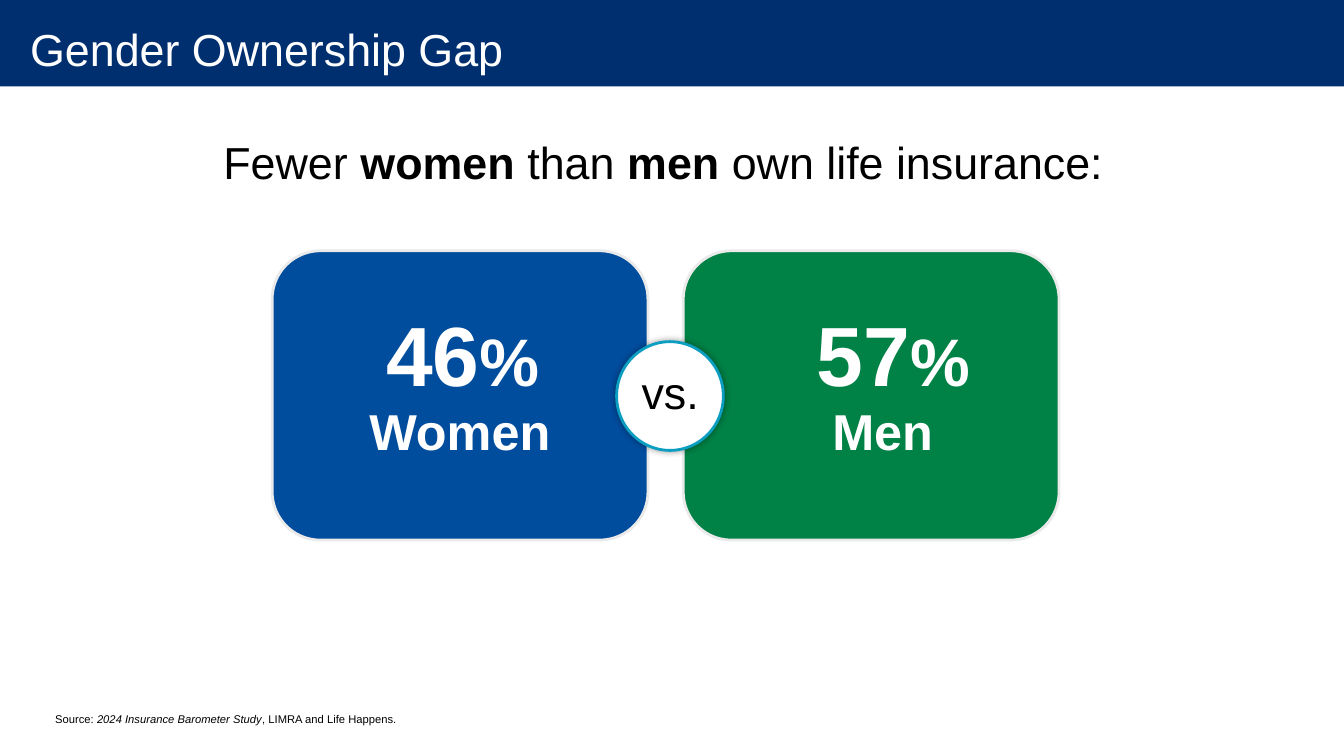
from dataclasses import dataclass

from lxml.etree import SubElement
from pptx import Presentation
from pptx.dml.color import RGBColor
from pptx.enum.shapes import MSO_SHAPE
from pptx.enum.text import MSO_ANCHOR, PP_ALIGN
from pptx.oxml.ns import qn
from pptx.util import Cm, Pt


@dataclass(frozen=True)
class Theme:
    font: str = "Arial"
    navy: str = "002F70"
    blue: str = "004C9D"
    green: str = "008145"
    teal: str = "0B9EC1"
    pale: str = "EBEAEA"
    white: str = "FFFFFF"
    black: str = "000000"
    heading: int = 32
    figure: int = 60
    percent: int = 48
    label: int = 36
    source: int = 8


class SlideBuilder:
    def __init__(self, slide, theme):
        self.slide = slide
        self.theme = theme

    def shape(self, preset, box, fill, outline=None):
        item = self.slide.shapes.add_shape(preset, *map(Cm, box))
        item.shadow.inherit = False
        item.fill.solid()
        item.fill.fore_color.rgb = RGBColor.from_string(fill)
        if outline:
            item.line.color.rgb = RGBColor.from_string(outline)
            item.line.width = Pt(2)
        else:
            item.line.fill.background()
        return item

    def glow_shadow(self, item, blur, opacity):
        effects = item._element.spPr.find(qn("a:effectLst"))
        shadow = SubElement(effects, qn("a:outerShdw"), blurRad=str(Pt(blur)),
                            dist="0", dir="0", algn="ctr", rotWithShape="0")
        color = SubElement(shadow, qn("a:srgbClr"), val=self.theme.black)
        SubElement(color, qn("a:alpha"), val=str(opacity * 1000))

    def text(self, box, runs, size, color, bold=None, align=PP_ALIGN.CENTER):
        frame = self.slide.shapes.add_textbox(*map(Cm, box)).text_frame
        frame.word_wrap = True
        paragraph = frame.paragraphs[0]
        paragraph.alignment = align
        paragraph.font.name = self.theme.font
        paragraph.font.size = Pt(size)
        paragraph.font.color.rgb = RGBColor.from_string(color)
        paragraph.font.bold = bold
        for wording, style in runs:
            run = paragraph.add_run()
            run.text = wording
            for attribute, value in style.items():
                setattr(run.font, attribute, value)
        return frame

    def title(self, wording, width):
        theme = self.theme
        self.shape(MSO_SHAPE.RECTANGLE, (0, 0, width, 2.18), theme.navy)
        frame = self.text((0, 0, width, 2.46), [(wording, {})],
                          theme.heading, theme.white, align=PP_ALIGN.LEFT)
        frame.vertical_anchor = MSO_ANCHOR.MIDDLE
        frame.margin_left, frame.margin_right = Cm(0.76), Cm(0.51)
        frame.margin_top = frame.margin_bottom = 0

    def panel(self, left, fill, share, group, share_span, group_span):
        theme = self.theme
        self.shape(MSO_SHAPE.ROUNDED_RECTANGLE, (left, 6.32, 9.47, 7.29), fill, theme.pale)
        share_left, share_width = share_span
        self.text((share_left, 7.49, share_width, 2.82),
                  [(share, {"size": Pt(theme.figure)}), ("%", {"size": Pt(theme.percent)})],
                  theme.figure, theme.white, bold=True)
        group_left, group_width = group_span
        self.text((group_left, 9.96, group_width, 1.8), [(group, {})],
                  theme.label, theme.white, bold=True)

    def versus(self):
        theme = self.theme
        badge = self.shape(MSO_SHAPE.FLOWCHART_CONNECTOR, (15.54, 8.61, 2.69, 2.74),
                           theme.white, theme.teal)
        self.glow_shadow(badge, blur=5, opacity=40)
        self.text((15.52, 9.07, 2.74, 1.63), [("vs.", {})], theme.heading, theme.black)


def main():
    theme = Theme()
    width = 33.87
    deck = Presentation()
    deck.slide_width, deck.slide_height = Cm(width), Cm(19.05)
    gap = SlideBuilder(deck.slides.add_slide(deck.slide_layouts[6]), theme)

    gap.title("Gender Ownership Gap", width)
    strong = {"bold": True}
    gap.text((5.23, 3.28, 23.29, 1.63),
             [("Fewer ", {}), ("women", strong), (" than ", {}), ("men", strong),
              (" own life insurance: ", {})], theme.heading, theme.black)
    gap.panel(17.22, theme.green, "57", "Men", (19.86, 5.31), (20.19, 4.11))
    gap.panel(6.86, theme.blue, "46", "Women", (8.69, 5.94), (8.86, 5.46))
    gap.versus()
    gap.text((1.14, 17.83, 18.9, 0.61),
             [("Source: ", {}), ("2024 Insurance Barometer Study", {"italic": True}),
              (", LIMRA and Life Happens.", {})],
             theme.source, theme.black, align=PP_ALIGN.LEFT)
    deck.save("out.pptx")


if __name__ == "__main__":
    main()
